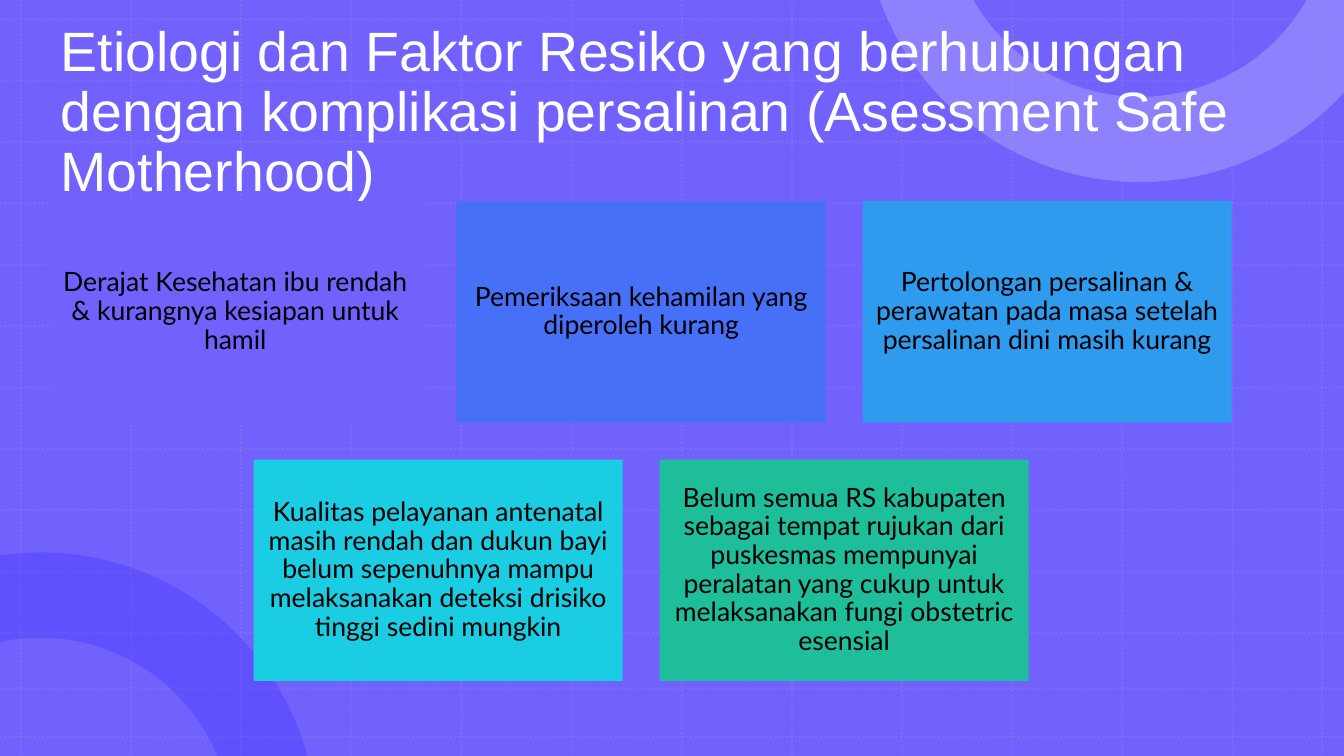
from dataclasses import dataclass
from math import acos, asin, cos, sin, tan

from pptx import Presentation
from pptx import util as u
from pptx.dml.color import RGBColor
from pptx.enum import dml, shapes, text
from pptx.oxml.ns import qn
from lxml import etree

WHITE = RGBColor(0xFF, 0xFF, 0xFF)
BLACK = RGBColor(0, 0, 0)
VIOLET = RGBColor(0x71, 0x62, 0xFE)
INDIGO = RGBColor(0x22, 0x0B, 0xFD)
LILAC = RGBColor(0xAA, 0xA1, 0xFE)
MAUVE = RGBColor(0xB4, 0x95, 0xC2)
BLUE = RGBColor(0x47, 0x70, 0xF8)
SKY = RGBColor(0x2F, 0x9B, 0xEF)
CYAN = RGBColor(0x1A, 0xCD, 0xE3)
GREEN = RGBColor(0x1E, 0xBE, 0x9B)

# All lengths in centimetres
WIDTH, HEIGHT = 33.87, 19.05
CARD_LEFT, CARD_TOP = 1.28, 5.07
CARD_W, CARD_H, CARD_GAP = 9.3, 5.58, 0.93
OUTER_R, INNER_R = 6.98, 4.83
ARC_CURVES = 2


@dataclass
class Ring:
    """A ring whose centre lies beyond the top or bottom edge."""
    cx: float
    beyond: float
    at_top: bool
    color: RGBColor
    opacity: int
    corners: tuple = ()


@dataclass
class Card:
    row: int
    col: float
    color: RGBColor
    label: str


RINGS = [
    Ring(1.02, 1.85, False, INDIGO, 20),
    Ring(28.73, 2.39, True, LILAC, 50, ((WIDTH, 0),)),
]
CARDS = [
    Card(0, 0, VIOLET, "Derajat Kesehatan ibu rendah & kurangnya kesiapan untuk hamil"),
    Card(0, 1, BLUE, "Pemeriksaan kehamilan yang diperoleh kurang"),
    Card(0, 2, SKY, "Pertolongan persalinan & perawatan pada masa setelah "
                    "persalinan dini masih kurang"),
    Card(1, 0.5, CYAN, "Kualitas pelayanan antenatal masih rendah dan dukun bayi belum "
                       "sepenuhnya mampu melaksanakan deteksi drisiko tinggi sedini mungkin"),
    Card(1, 1.5, GREEN, "Belum semua RS kabupaten sebagai tempat rujukan dari puskesmas "
                        "mempunyai peralatan yang cukup untuk melaksanakan fungi obstetric "
                        "esensial"),
]


def set_opacity(sp, percent: int) -> None:
    clr = next(sp.element.spPr.iter(qn("a:srgbClr")))
    etree.SubElement(clr, qn("a:alpha")).set("val", str(percent * 1000))


def paint(sp, color: RGBColor) -> None:
    sp.shadow.inherit = False
    sp.fill.solid()
    sp.fill.fore_color.rgb = color
    sp.line.fill.background()


def add_rect(s, x: float, y: float, w: float, h: float, color: RGBColor):
    sp = s.shapes.add_shape(shapes.MSO_SHAPE.RECTANGLE, u.Cm(x), u.Cm(y), u.Cm(w), u.Cm(h))
    paint(sp, color)
    return sp


def write(tf, content: str, *, font: str, size: float, color: RGBColor,
          align=text.PP_ALIGN.LEFT) -> None:
    tf.word_wrap = True
    tf.auto_size = text.MSO_AUTO_SIZE.NONE
    tf.vertical_anchor = text.MSO_ANCHOR.MIDDLE
    p = tf.paragraphs[0]
    p.alignment = align
    p.line_spacing = 0.9
    r = p.add_run()
    r.text = content
    r.font.name = font
    r.font.size = u.Pt(size)
    r.font.color.rgb = color


def add_grid_line(s, x1: float, y1: float, x2: float, y2: float):
    line = s.shapes.add_connector(shapes.MSO_CONNECTOR.STRAIGHT,
                                  u.Cm(x1), u.Cm(y1), u.Cm(x2), u.Cm(y2))
    line.line.color.rgb = MAUVE
    line.line.width = u.Pt(1.5)
    line.line.dash_style = dml.MSO_LINE.ROUND_DOT
    set_opacity(line, 20)
    etree.SubElement(line.element.spPr, qn("a:effectLst"))
    return line


def arc(ring: Ring, radius: float) -> list:
    """Bezier points of the part of a circle on the slide, left to right."""
    reach = acos(ring.beyond / radius)
    start = max(-reach, -asin(min(1, ring.cx / radius)))
    end = min(reach, asin(min(1, (WIDTH - ring.cx) / radius)))
    step = (end - start) / ARC_CURVES
    handle = 4 / 3 * tan(step / 4)
    points = []
    for i in range(ARC_CURVES + 1):
        angle = start + step * i
        for pull in (-handle, 0, handle):
            depth = radius * (cos(angle) - pull * sin(angle)) - ring.beyond
            points.append((ring.cx + radius * (sin(angle) + pull * cos(angle)),
                           depth if ring.at_top else HEIGHT - depth))
    return points[1:-1]


def add_ring(s, ring: Ring):
    outer, inner = arc(ring, OUTER_R), arc(ring, INNER_R)[::-1]
    outline = outer + list(ring.corners) + inner
    points = [(u.Cm(x), u.Cm(y)) for x, y in outline]
    builder = s.shapes.build_freeform(*points[0])
    builder.add_line_segments(points[1:], close=True)
    sp = builder.convert_to_shape()
    # Join every three segments of an arc into one curve
    segments = list(sp.element.iter(qn("a:lnTo")))
    inner_start = len(outer) + len(ring.corners)
    for first in (0, inner_start):
        for i in range(first, first + 3 * ARC_CURVES, 3):
            curve = etree.Element(qn("a:cubicBezTo"))
            segments[i].addprevious(curve)
            for segment in segments[i:i + 3]:
                curve.append(segment[0])
                segment.getparent().remove(segment)
    paint(sp, ring.color)
    set_opacity(sp, ring.opacity)
    return sp


def move_to_layout(layout, decor: list) -> None:
    tree = layout.placeholders[0].element.getparent()
    for number, sp in enumerate(decor, start=100):
        next(sp.element.iter(qn("p:cNvPr"))).set("id", str(number))
        tree.append(sp.element)


def add_card(s, card: Card) -> None:
    sp = add_rect(s, CARD_LEFT + card.col * (CARD_W + CARD_GAP),
                  CARD_TOP + card.row * (CARD_H + CARD_GAP), CARD_W, CARD_H, card.color)
    tf = sp.text_frame
    tf.margin_left = tf.margin_right = tf.margin_top = tf.margin_bottom = u.Cm(0.2)
    write(tf, card.label, font="Lato", size=19, color=BLACK, align=text.PP_ALIGN.CENTER)


def main() -> None:
    prs = Presentation()
    prs.slide_width, prs.slide_height = u.Cm(WIDTH), u.Cm(HEIGHT)
    layout = prs.slide_layouts[5]
    s = prs.slides.add_slide(layout)

    # Layout decoration: backdrop, dotted grid, corner rings
    decor = [add_rect(s, 0, 0, WIDTH, HEIGHT, VIOLET)]
    columns = [0.53 + 30.53 / 11 * i for i in range(12)] + [33.32]
    rows = [0.48 + 15.47 / 10 * i for i in range(11)] + [17.35, 18.57]
    decor += [add_grid_line(s, x, 0, x, HEIGHT) for x in columns]
    decor += [add_grid_line(s, 0, y, WIDTH, y) for y in rows]
    decor += [add_ring(s, ring) for ring in RINGS]
    move_to_layout(layout, decor)

    # Title
    title = s.shapes.title
    title.left, title.top = u.Cm(1.28), u.Cm(1.02)
    title.width, title.height = u.Cm(31.32), u.Cm(3.68)
    write(title.text_frame,
          "Etiologi dan Faktor Resiko yang berhubungan dengan komplikasi persalinan "
          "(Asessment Safe Motherhood)", font="Arial", size=39.6, color=WHITE)

    # Risk factor cards
    for card in CARDS:
        add_card(s, card)

    prs.save("out.pptx")


if __name__ == "__main__":
    main()
